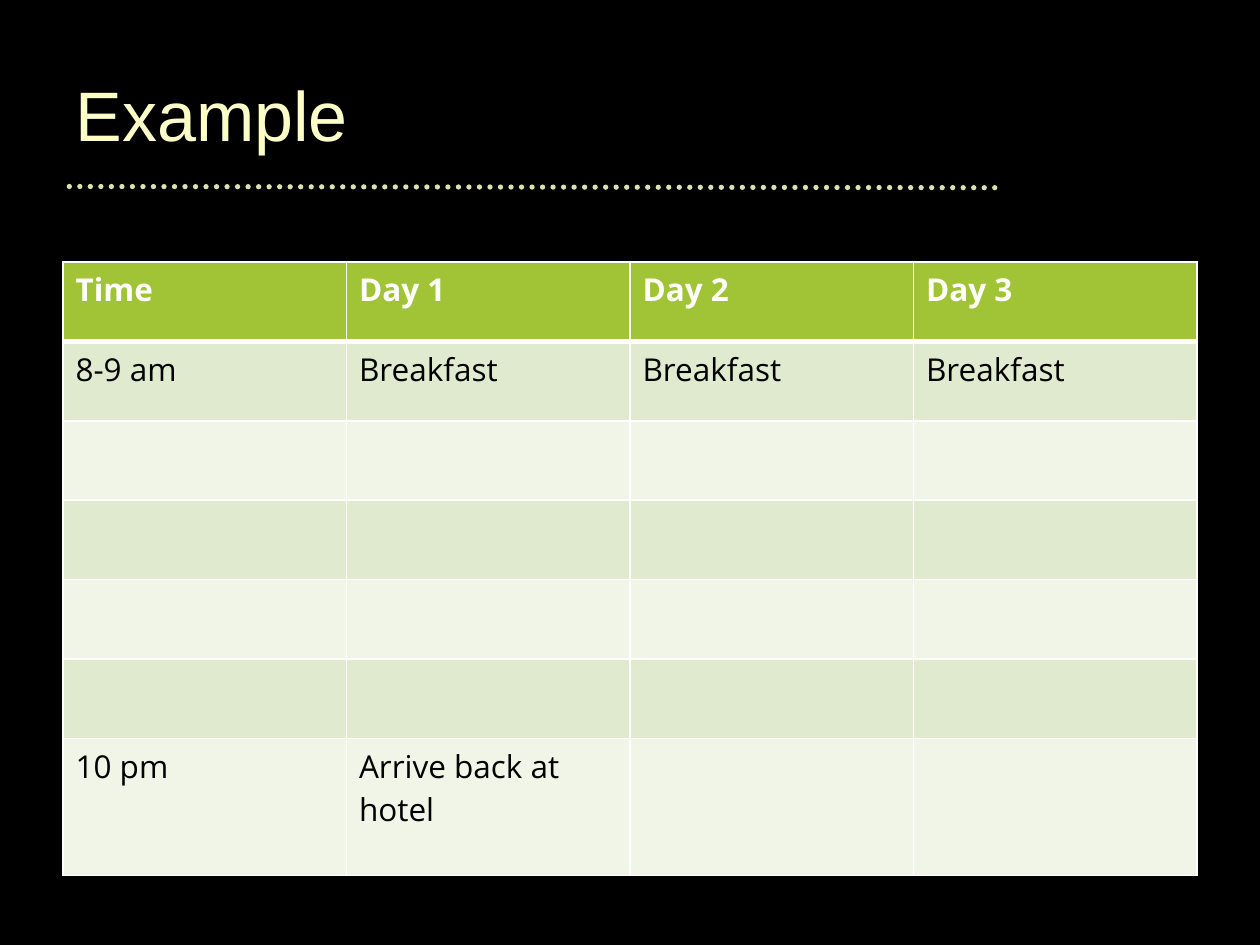
from dataclasses import dataclass

from lxml.etree import SubElement
from pptx import Presentation
from pptx.dml.color import RGBColor
from pptx.enum.dml import MSO_LINE
from pptx.enum.shapes import MSO_CONNECTOR
from pptx.enum.text import MSO_ANCHOR, PP_ALIGN
from pptx.oxml.ns import qn
from pptx.util import Inches, Pt


@dataclass(frozen=True)
class Theme:
    background: RGBColor = RGBColor.from_string("000000")
    title: RGBColor = RGBColor.from_string("FBFEC6")
    divider: RGBColor = RGBColor.from_string("DDE0AF")
    header: RGBColor = RGBColor.from_string("A0C435")
    odd_row: RGBColor = RGBColor.from_string("DFEACE")
    even_row: RGBColor = RGBColor.from_string("F0F5E8")
    header_text: RGBColor = RGBColor.from_string("FFFFFF")
    body_text: RGBColor = RGBColor.from_string("000000")
    border: str = "FFFFFF"
    title_font: str = "Arial"
    table_font: str = "Open Sans"
    title_size: Pt = Pt(40)
    table_size: Pt = Pt(18)


THEME = Theme()
COLUMN_WIDTH = Inches(2.25)
ROW_HEIGHT = Inches(0.63)
LAST_ROW_HEIGHT = Inches(1.09)
SCHEDULE = [
    ["Time", "Day 1", "Day 2", "Day 3"],
    ["8-9 am", "Breakfast", "Breakfast", "Breakfast"],
    *[[""] * 4 for _ in range(4)],
    ["10 pm", "Arrive back at hotel", "", ""],
]


def set_format(target, values):
    for name, value in values.items():
        setattr(target, name, value)


def add_borders(cell, widths):
    """Draw solid borders; widths maps a side (L, R, T, B) to points."""
    properties = cell._tc.get_or_add_tcPr()
    for side, width in widths.items():
        border = SubElement(properties, qn(f"a:ln{side}"), w=str(Pt(width)))
        fill = SubElement(border, qn("a:solidFill"))
        SubElement(fill, qn("a:srgbClr"), val=THEME.border)


prs = Presentation()
prs.slide_width, prs.slide_height = Inches(10), Inches(7.5)
slide = prs.slides.add_slide(prs.slide_layouts[5])
slide.background.fill.solid()
slide.background.fill.fore_color.rgb = THEME.background

# Dotted divider below the title
divider = slide.shapes.add_connector(
    MSO_CONNECTOR.STRAIGHT, Inches(0.55), Inches(1.48), Inches(7.97), Inches(1.49))
divider.line.color.rgb = THEME.divider
set_format(divider.line, {"width": Pt(3), "dash_style": MSO_LINE.ROUND_DOT})
divider_properties = divider._element.spPr
divider_properties.find(qn("a:ln")).set("cap", "rnd")
SubElement(divider_properties, qn("a:effectLst"))

# Title
title = slide.shapes.title
set_format(title, {"left": Inches(0.5), "top": Inches(0.39),
                   "width": Inches(7.47), "height": Inches(1.02)})
title.text_frame.text = "Example"
title.text_frame.vertical_anchor = MSO_ANCHOR.MIDDLE
heading = title.text_frame.paragraphs[0]
heading.alignment = PP_ALIGN.LEFT
heading_font = heading.runs[0].font
set_format(heading_font, {"name": THEME.title_font, "size": THEME.title_size})
heading_font.color.rgb = THEME.title

# Schedule
row_heights = [ROW_HEIGHT] * (len(SCHEDULE) - 1) + [LAST_ROW_HEIGHT]
schedule = slide.shapes.add_table(
    len(SCHEDULE), len(SCHEDULE[0]), Inches(0.5), Inches(2.08),
    COLUMN_WIDTH * len(SCHEDULE[0]), sum(row_heights)).table
for column in schedule.columns:
    column.width = COLUMN_WIDTH

for row, (entries, height) in enumerate(zip(SCHEDULE, row_heights)):
    schedule.rows[row].height = height
    is_header = row == 0
    row_fill = THEME.header if is_header else THEME.odd_row if row % 2 else THEME.even_row
    borders = {"L": 1, "R": 1, "T": 3 if row == 1 else 1, "B": 3 if is_header else 1}
    for column, entry in enumerate(entries):
        cell = schedule.cell(row, column)
        add_borders(cell, borders)
        cell.fill.solid()
        cell.fill.fore_color.rgb = row_fill
        if entry:
            cell.text = entry
            entry_font = cell.text_frame.paragraphs[0].runs[0].font
            set_format(entry_font, {"name": THEME.table_font, "size": THEME.table_size,
                                    "bold": is_header})
            entry_font.color.rgb = THEME.header_text if is_header else THEME.body_text

prs.save("out.pptx")
